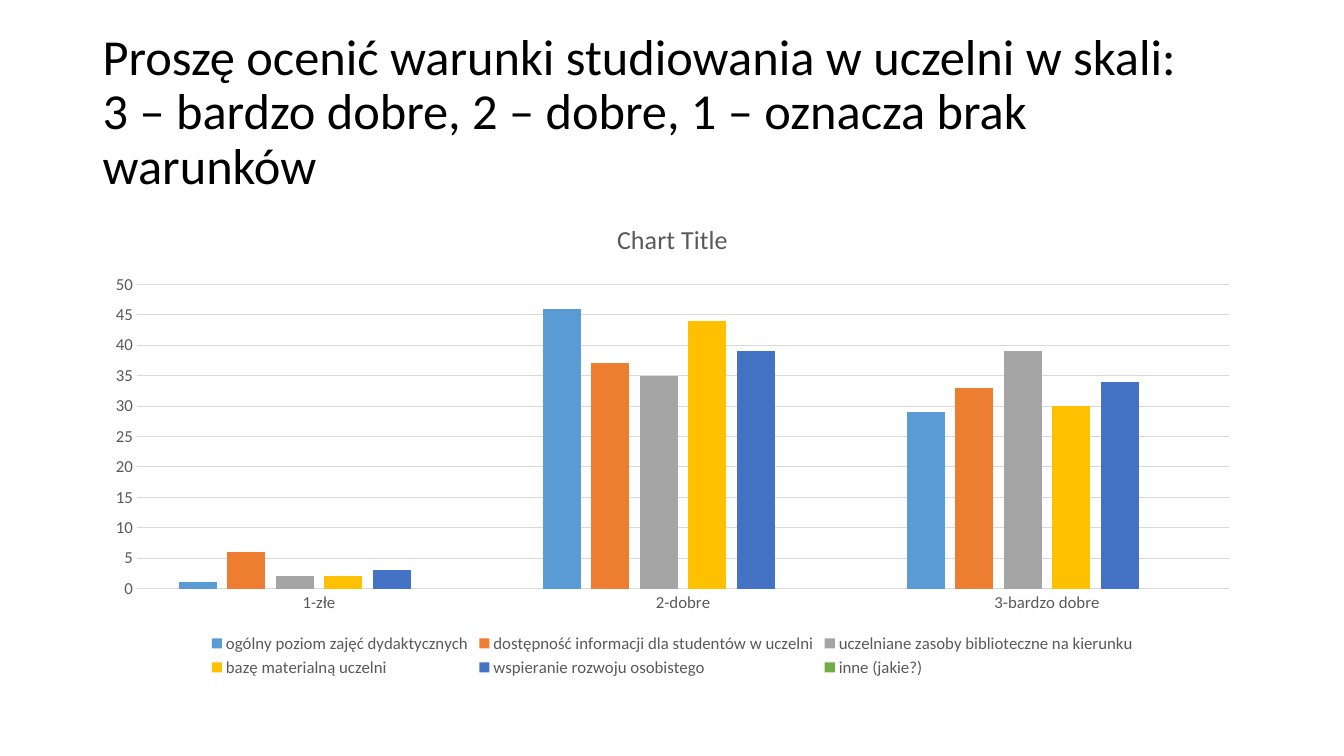
from dataclasses import dataclass

from pptx import Presentation
from pptx.chart.data import CategoryChartData
from pptx.dml.color import RGBColor
from pptx.enum.chart import XL_CHART_TYPE, XL_LEGEND_POSITION, XL_TICK_MARK
from pptx.enum.text import MSO_ANCHOR
from pptx.util import Inches, Pt


@dataclass(frozen=True)
class Theme:
    font: str = "Calibri"
    heading: str = "000000"
    label: str = "595959"
    grid: str = "D9D9D9"
    bars: tuple = ("5B9BD5", "ED7D31", "A5A5A5", "FFC000", "4472C4", "70AD47")
    heading_size: float = 36
    chart_title_size: float = 18.6
    label_size: float = 12
    line_width: float = 0.75


theme = Theme()


def style_font(font, size, color):
    font.name = theme.font
    font.size = Pt(size)
    font.bold = False
    font.color.rgb = RGBColor.from_string(color)


def style_line(line):
    line.color.rgb = RGBColor.from_string(theme.grid)
    line.width = Pt(theme.line_width)


presentation = Presentation()
presentation.slide_width = Inches(13.33)
presentation.slide_height = Inches(7.5)
slide = presentation.slides.add_slide(presentation.slide_layouts[6])

question = slide.shapes.add_textbox(
    Inches(0.92), Inches(0.4), Inches(11.5), Inches(1.45)
).text_frame
question.word_wrap = True
question.vertical_anchor = MSO_ANCHOR.MIDDLE
wording = question.paragraphs[0]
wording.line_spacing = 0.9
question_lines = (
    "Proszę ocenić warunki studiowania w uczelni w skali:",
    "3 – bardzo dobre, 2 – dobre, 1 – oznacza brak warunków",
)
for index, line_text in enumerate(question_lines):
    if index:
        wording.add_line_break()
    run = wording.add_run()
    run.text = line_text
    style_font(run.font, theme.heading_size, theme.heading)

ratings = {
    "ogólny poziom zajęć dydaktycznych": (1, 46, 29),
    "dostępność informacji dla studentów w uczelni": (6, 37, 33),
    "uczelniane zasoby biblioteczne na kierunku": (2, 35, 39),
    "bazę materialną uczelni": (2, 44, 30),
    "wspieranie rozwoju osobistego": (3, 39, 34),
    "inne (jakie?)": (None, None, None),
}
survey = CategoryChartData()
survey.categories = ("1-złe", "2-dobre", "3-bardzo dobre")
for condition, counts in ratings.items():
    survey.add_series(condition, counts)

chart = slide.shapes.add_chart(
    XL_CHART_TYPE.COLUMN_CLUSTERED,
    Inches(0.92), Inches(2), Inches(11.5), Inches(4.76), survey,
).chart
style_font(chart.font, theme.label_size, theme.label)

chart_title = chart.chart_title.text_frame.paragraphs[0].add_run()
chart_title.text = "Chart Title"
style_font(chart_title.font, theme.chart_title_size, theme.label)
chart.chart_title.include_in_layout = False

columns = chart.plots[0]
columns.gap_width = 219
columns.overlap = -27
columns.vary_by_categories = False
for condition_bars, color in zip(columns.series, theme.bars):
    condition_bars.format.fill.solid()
    condition_bars.format.fill.fore_color.rgb = RGBColor.from_string(color)

for axis in (chart.category_axis, chart.value_axis):
    axis.major_tick_mark = XL_TICK_MARK.NONE
    axis.minor_tick_mark = XL_TICK_MARK.NONE
    style_font(axis.tick_labels.font, theme.label_size, theme.label)

style_line(chart.category_axis.format.line)
count_axis = chart.value_axis
count_axis.minimum_scale = 0
count_axis.maximum_scale = 50
count_axis.major_unit = 5
count_axis.format.line.fill.background()
count_axis.has_major_gridlines = True
style_line(count_axis.major_gridlines.format.line)

chart.has_legend = True
chart.legend.position = XL_LEGEND_POSITION.BOTTOM
chart.legend.include_in_layout = False
style_font(chart.legend.font, theme.label_size, theme.label)

presentation.save("out.pptx")
